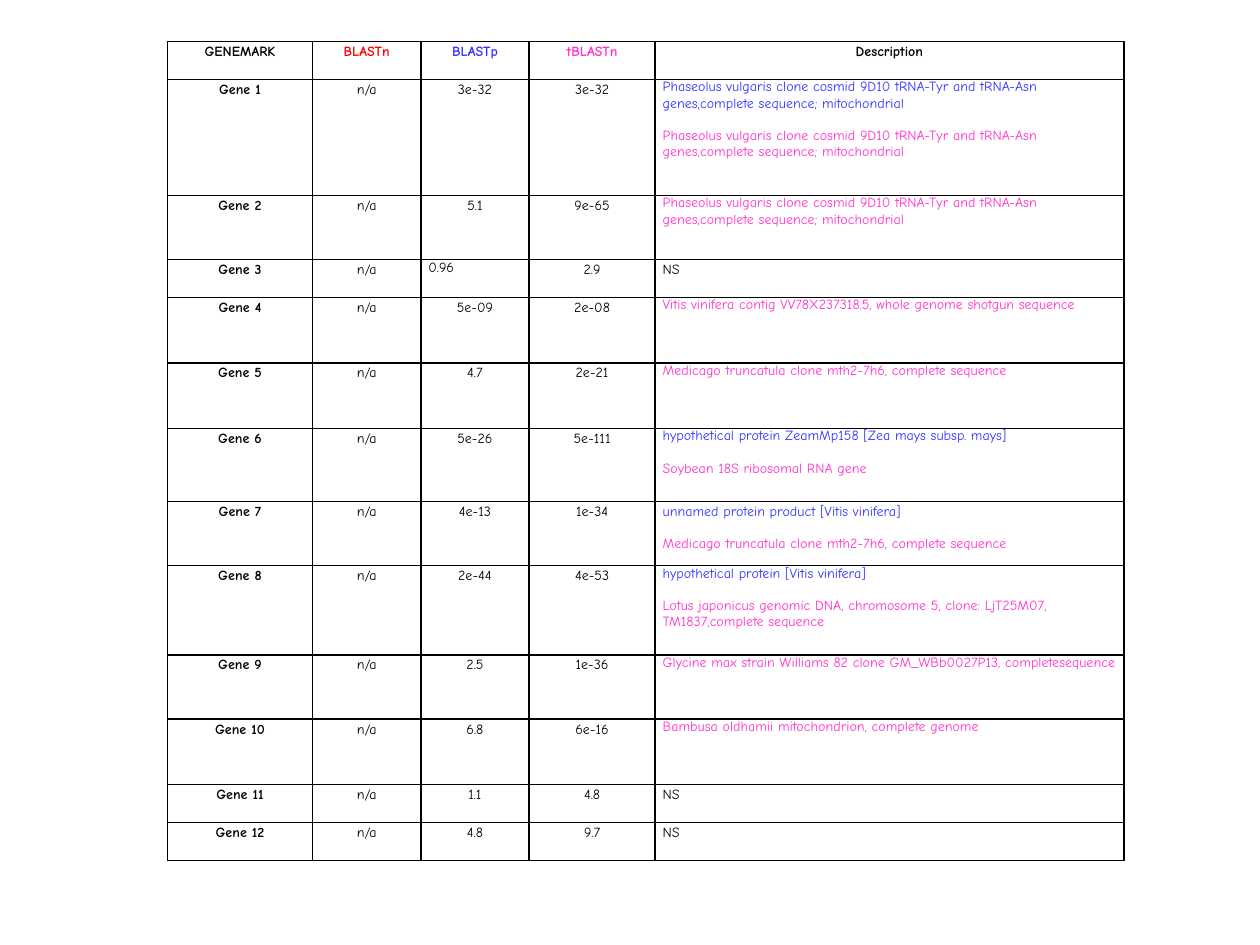
from dataclasses import dataclass
from typing import NamedTuple

from lxml.etree import SubElement
from pptx import Presentation
from pptx.dml.color import RGBColor
from pptx.enum.text import PP_ALIGN
from pptx.oxml.ns import qn
from pptx.table import Table, _Cell
from pptx.util import Inches, Pt


@dataclass(frozen=True)
class Theme:
    font: str = "Comic Neue"
    size: float = 8
    ink: str = "000000"
    blastn: str = "FF0000"
    blastp: str = "3333FF"
    tblastn: str = "FF33CC"
    border: float = 1
    loose: float = 1.15
    tight: float = 1.0
    hit_gap: float = 9.3
    inset: float = 0.06


THEME = Theme()


class Line(NamedTuple):
    text: str
    color: str = THEME.ink
    bold: bool = False
    centered: bool = True
    spacing: float = THEME.loose
    before: float = 0


class Gene(NamedTuple):
    height: float
    blastp: str
    tblastn: str
    protein_hit: str = ""
    nucleotide_hit: str = ""


LEFT, TOP = 1.33, 0.33
COLUMNS = [1.15, 0.86, 0.86, 1, 3.72]
HEADER_HEIGHT = 0.3
HEADER = [
    Line("GENEMARK", bold=True),
    Line("BLASTn", THEME.blastn, bold=True),
    Line("BLASTp", THEME.blastp, bold=True),
    Line("tBLASTn", THEME.tblastn, bold=True),
    Line("Description", bold=True),
]
PHASEOLUS = ("Phaseolus vulgaris clone cosmid 9D10 tRNA-Tyr and tRNA-Asn "
             "genes,complete sequence; mitochondrial")
MEDICAGO = "Medicago truncatula clone mth2-7h6, complete sequence"
GENES = [
    Gene(0.92, "3e-32", "3e-32", PHASEOLUS, PHASEOLUS),
    Gene(0.51, "5.1", "9e-65", "", PHASEOLUS),
    Gene(0.3, "0.96", "2.9"),
    Gene(0.52, "5e-09", "2e-08", "",
         "Vitis vinifera contig VV78X237318.5, whole genome shotgun sequence"),
    Gene(0.52, "4.7", "2e-21", "", MEDICAGO),
    Gene(0.58, "5e-26", "5e-111",
         "hypothetical protein ZeamMp158 [Zea mays subsp. mays]",
         "Soybean 18S ribosomal RNA gene"),
    Gene(0.51, "4e-13", "1e-34", "unnamed protein product [Vitis vinifera]", MEDICAGO),
    Gene(0.71, "2e-44", "4e-53", "hypothetical protein [Vitis vinifera]",
         "Lotus japonicus genomic DNA, chromosome 5, clone: LjT25M07, "
         "TM1837,complete sequence"),
    Gene(0.51, "2.5", "1e-36", "",
         "Glycine max strain Williams 82 clone GM_WBb0027P13, completesequence"),
    Gene(0.52, "6.8", "6e-16", "", "Bambusa oldhamii mitochondrion, complete genome"),
    Gene(0.3, "1.1", "4.8"),
    Gene(0.3, "4.8", "9.7"),
]
LEFT_ALIGNED_VALUE = "0.96"
LOOSE_HIT = "unnamed protein product [Vitis vinifera]"


def description(gene: Gene) -> list[Line]:
    """Protein hit in the BLASTp colour, nucleotide hit in the tBLASTn colour."""
    hits = [(gene.protein_hit, THEME.blastp), (gene.nucleotide_hit, THEME.tblastn)]
    found = [(text, color) for text, color in hits if text]
    if not found:
        return [Line("NS", centered=False)]
    return [
        Line(text, color, centered=False,
             spacing=THEME.loose if text == LOOSE_HIT else THEME.tight,
             before=THEME.hit_gap if i else 0)
        for i, (text, color) in enumerate(found)
    ]


def score(value: str) -> Line:
    if value == LEFT_ALIGNED_VALUE:
        return Line(value, centered=False, spacing=THEME.tight)
    return Line(value)


def gene_row(number: int, gene: Gene) -> list[list[Line]]:
    return [
        [Line(f"Gene {number}", bold=True)],
        [Line("n/a")],
        [score(gene.blastp)],
        [score(gene.tblastn)],
        description(gene),
    ]


def add_borders(cell: _Cell) -> None:
    tc_pr = cell._tc.get_or_add_tcPr()
    for side in ("lnL", "lnR", "lnT", "lnB"):
        ln = SubElement(tc_pr, qn(f"a:{side}"), w=str(Pt(THEME.border)))
        fill = SubElement(ln, qn("a:solidFill"))
        SubElement(fill, qn("a:srgbClr"), val=THEME.ink)


def fill_cell(cell: _Cell, lines: list[Line]) -> None:
    cell.margin_left = cell.margin_right = Inches(THEME.inset)
    cell.margin_top = cell.margin_bottom = 0
    add_borders(cell)
    cell.fill.background()
    tf = cell.text_frame
    for i, line in enumerate(lines):
        p = tf.add_paragraph() if i else tf.paragraphs[0]
        p.text = line.text
        p.alignment = PP_ALIGN.CENTER if line.centered else PP_ALIGN.LEFT
        p.line_spacing = line.spacing
        p.space_before = Pt(line.before)
        p.font.name = THEME.font
        p.font.size = Pt(THEME.size)
        p.font.bold = line.bold
        p.font.color.rgb = RGBColor.from_string(line.color)


def fill_table(table: Table) -> None:
    table.first_row = table.horz_banding = False
    for column, width in zip(table.columns, COLUMNS):
        column.width = Inches(width)
    heights = [HEADER_HEIGHT] + [gene.height for gene in GENES]
    rows = [[[title] for title in HEADER]]
    rows += [gene_row(n, gene) for n, gene in enumerate(GENES, 1)]
    for row, height, contents in zip(table.rows, heights, rows):
        row.height = Inches(height)
        for cell, lines in zip(row.cells, contents):
            fill_cell(cell, lines)


def main() -> None:
    prs = Presentation()
    prs.slide_width, prs.slide_height = Inches(10), Inches(7.5)
    s = prs.slides.add_slide(prs.slide_layouts[6])
    height = HEADER_HEIGHT + sum(gene.height for gene in GENES)
    frame = s.shapes.add_table(
        len(GENES) + 1, len(COLUMNS),
        Inches(LEFT), Inches(TOP), Inches(sum(COLUMNS)), Inches(height))
    fill_table(frame.table)
    prs.save("out.pptx")


if __name__ == "__main__":
    main()
